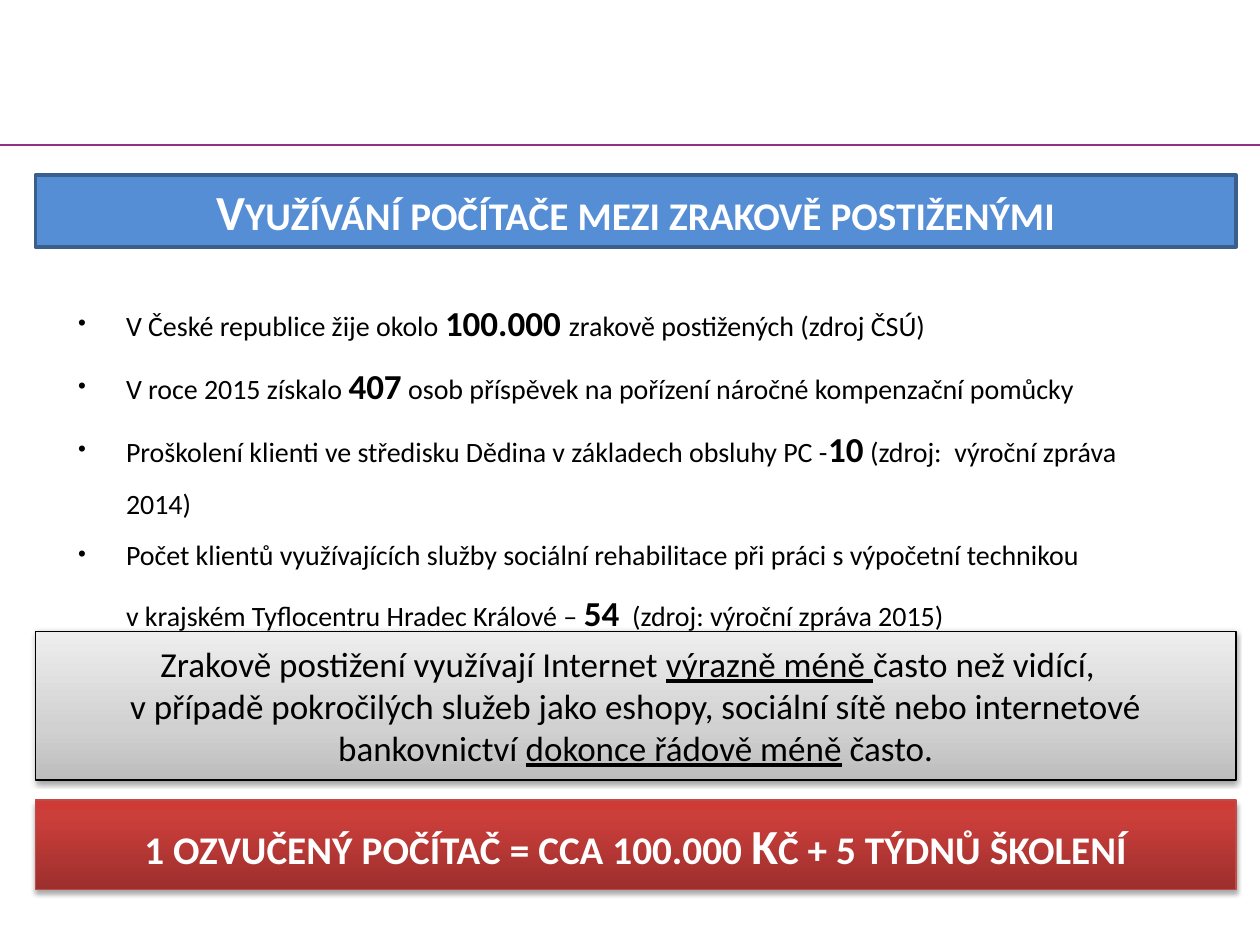
from pptx import Presentation
from pptx.dml.color import RGBColor
from pptx.enum.shapes import MSO_CONNECTOR, MSO_SHAPE
from pptx.enum.text import MSO_ANCHOR, MSO_AUTO_SIZE, PP_ALIGN
from pptx.oxml.ns import qn
from pptx.util import Inches, Pt
from lxml.etree import SubElement

COLORS = {
    "rule": "963080", "black": "000000", "white": "FFFFFF",
    "blue": "558ED5", "blue line": "3A5F8C", "red line": "BF4C48",
}
GRAY_STOPS = [(0, "BDBDBD"), (35, "D1D1D1"), (100, "EEEEEE")]
RED_STOPS = [(0, "9C2F2D"), (80, "CB3E3A"), (100, "CE3B37")]
BANNER_LEFT, BANNER_WIDTH = 0.28, 9.53

# Each span is a text and its kind of emphasis.
BULLETS = [
    [("V České republice žije okolo ", ""), ("100.000 ", "number"),
     ("zrakově postižených (zdroj ČSÚ)", "")],
    [("V roce 2015 získalo ", ""), ("407", "number"),
     (" osob příspěvek na pořízení náročné kompenzační pomůcky", "")],
    [("Proškolení klienti ve středisku Dědina v základech obsluhy PC -", ""),
     ("10", "number"), (" (zdroj:  výroční zpráva 2014)", "")],
    [("Počet klientů využívajících služby sociální rehabilitace při práci "
      "s výpočetní technikou \nv krajském Tyflocentru Hradec Králové – ", ""),
     ("54", "number"), ("  (zdroj: výroční zpráva 2015)", "")],
]
INTERNET_USE = [
    ("Zrakově postižení využívají Internet ", ""),
    ("výrazně méně ", "underline"),
    ("často než vidící,  \nv případě pokročilých služeb jako eshopy, "
     "sociální sítě nebo internetové bankovnictví ", ""),
    ("dokonce řádově méně", "underline"), (" často.", ""),
]


class SlideBuilder:
    font_name = "Calibri"

    def __init__(self, slide):
        self.slide = slide

    def color(self, name):
        return RGBColor.from_string(COLORS[name])

    def place(self, shape, left, top, width, height):
        shape.left, shape.top = Inches(left), Inches(top)
        shape.width, shape.height = Inches(width), Inches(height)

    def rule(self, top):
        line = self.slide.shapes.add_connector(
            MSO_CONNECTOR.STRAIGHT, 0, Inches(top), Inches(10), Inches(top))
        line.line.color.rgb = self.color("rule")
        line.line.width = Pt(1.5)
        SubElement(line._element.spPr, qn("a:effectLst"))

    def add_spans(self, paragraph, spans, size, color="black", heading=False):
        for text, emphasis in spans:
            for index, piece in enumerate(text.split("\n")):
                if index:
                    paragraph.add_line_break()
                span = paragraph.add_run()
                span.text = piece
                font = span.font
                font.name = self.font_name
                font.size = Pt(20 if emphasis == "number" else size)
                font.bold = heading or emphasis == "number"
                font.underline = emphasis == "underline"
                font.color.rgb = self.color(color)
                if heading:
                    span._r.get_or_add_rPr().set("cap", "small")

    def outline(self, shape, color, width):
        shape.line.color.rgb = self.color(color)
        shape.line.width = Pt(width)

    def centre(self, shape):
        """Centre the shape's text and return its first paragraph."""
        frame = shape.text_frame
        frame.word_wrap = True
        frame.auto_size = MSO_AUTO_SIZE.NONE
        frame.vertical_anchor = MSO_ANCHOR.MIDDLE
        paragraph = frame.paragraphs[0]
        paragraph.alignment = PP_ALIGN.CENTER
        return paragraph

    def title(self, text, top, height):
        box = self.slide.shapes.title
        self.place(box, BANNER_LEFT, top, BANNER_WIDTH, height)
        box.fill.solid()
        box.fill.fore_color.rgb = self.color("blue")
        self.outline(box, "blue line", 2)
        self.add_spans(self.centre(box), [(text, "")], 28, "white", heading=True)

    def bullets(self, items, left, top, width, height):
        body = self.slide.placeholders[1]
        self.place(body, left, top, width, height)
        frame = body.text_frame
        frame.auto_size = MSO_AUTO_SIZE.NONE
        frame.margin_left = Inches(0.19)
        for index, spans in enumerate(items):
            paragraph = frame.add_paragraph() if index else frame.paragraphs[0]
            paragraph.line_spacing = 1.5
            paragraph.space_before = Pt(0)
            properties = paragraph._p.get_or_add_pPr()
            properties.set("marL", str(Inches(0.38)))
            properties.set("indent", str(-Inches(0.38)))
            SubElement(properties, qn("a:buSzPct"), val="80000")
            SubElement(properties, qn("a:buFont"), typeface="Arial")
            SubElement(properties, qn("a:buChar"), char="•")
            self.add_spans(paragraph, spans, 16)

    def gradient(self, shape, stops):
        """Fill from bottom to top with any number of stops."""
        shape.fill.gradient()
        shape.fill.gradient_angle = 90
        stop_list = shape._element.spPr.find(".//" + qn("a:gsLst"))
        for stop in list(stop_list):
            stop_list.remove(stop)
        for position, color in stops:
            stop = SubElement(stop_list, qn("a:gs"), pos=str(position * 1000))
            SubElement(stop, qn("a:srgbClr"), val=color)

    def drop_shadow(self, shape, distance, opacity):
        shape.shadow.inherit = False
        effects = shape._element.spPr.find(qn("a:effectLst"))
        shadow = SubElement(
            effects, qn("a:outerShdw"), blurRad=str(Pt(3.1)),
            dist=str(Pt(distance)), dir="5400000", rotWithShape="0")
        color = SubElement(shadow, qn("a:srgbClr"), val=COLORS["black"])
        SubElement(color, qn("a:alpha"), val=str(opacity * 1000))

    def banner(self, top, height, stops, line, shadow):
        """Add a gradient box and return its centred paragraph."""
        box = self.slide.shapes.add_shape(
            MSO_SHAPE.RECTANGLE, Inches(BANNER_LEFT), Inches(top),
            Inches(BANNER_WIDTH), Inches(height))
        self.gradient(box, stops)
        self.outline(box, line, 0.75)
        self.drop_shadow(box, *shadow)
        return self.centre(box)


def main():
    deck = Presentation()
    deck.slide_width, deck.slide_height = Inches(10), Inches(7.5)
    builder = SlideBuilder(deck.slides.add_slide(deck.slide_layouts[1]))

    builder.rule(1.15)
    builder.title("Využívání počítače mezi zrakově postiženými", 1.39, 0.57)
    builder.bullets(BULLETS, 0.43, 2.18, 9.06, 2.52)

    finding = builder.banner(5.01, 1.18, GRAY_STOPS, "black", (1.6, 38))
    builder.add_spans(finding, INTERNET_USE, 20)

    cost = builder.banner(6.35, 0.71, RED_STOPS, "red line", (1.8, 35))
    builder.add_spans(
        cost, [("1 ozvučený počítač = cca 100.000 Kč + 5 týdnů školení", "")],
        28, "white", heading=True)

    deck.save("out.pptx")


if __name__ == "__main__":
    main()
